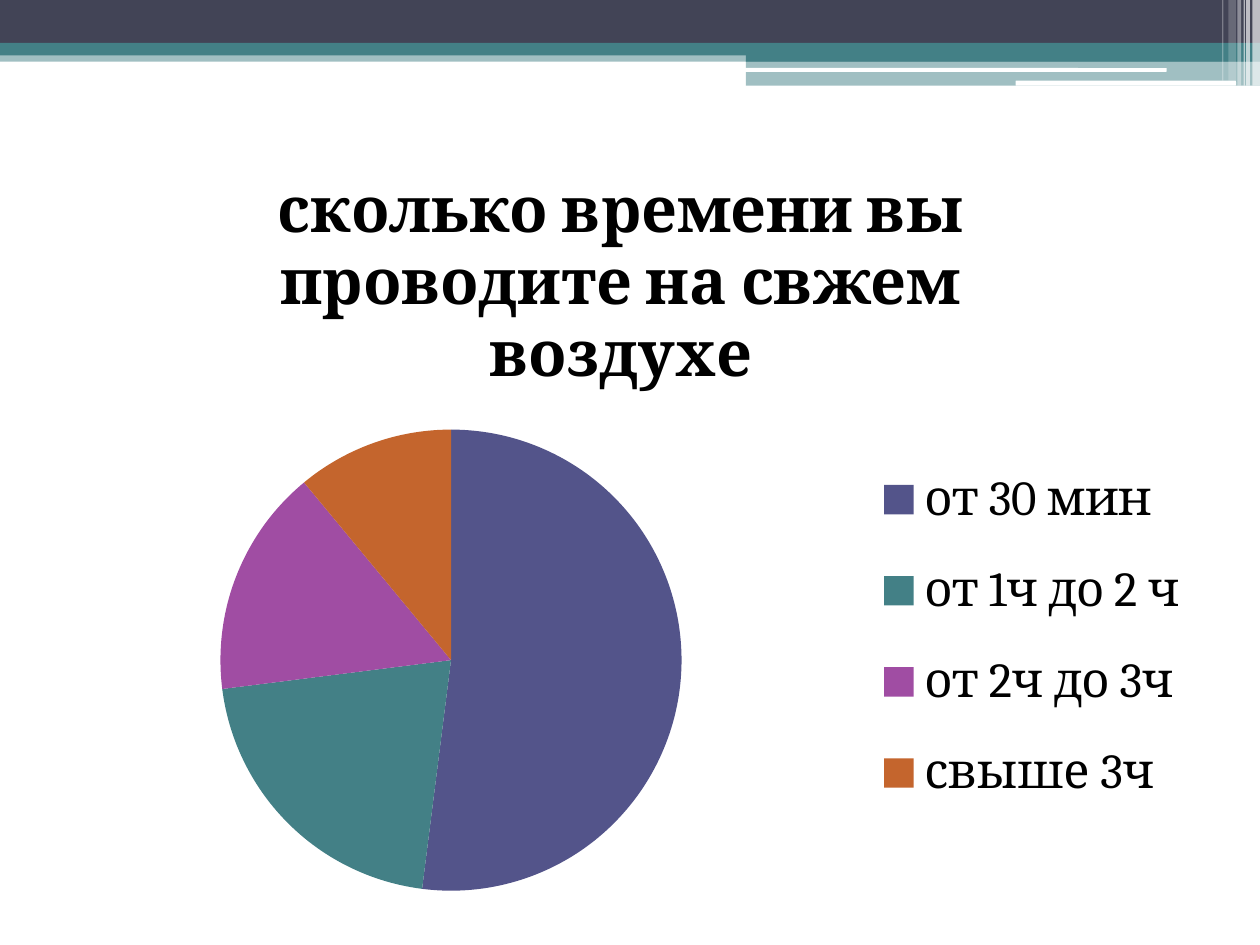
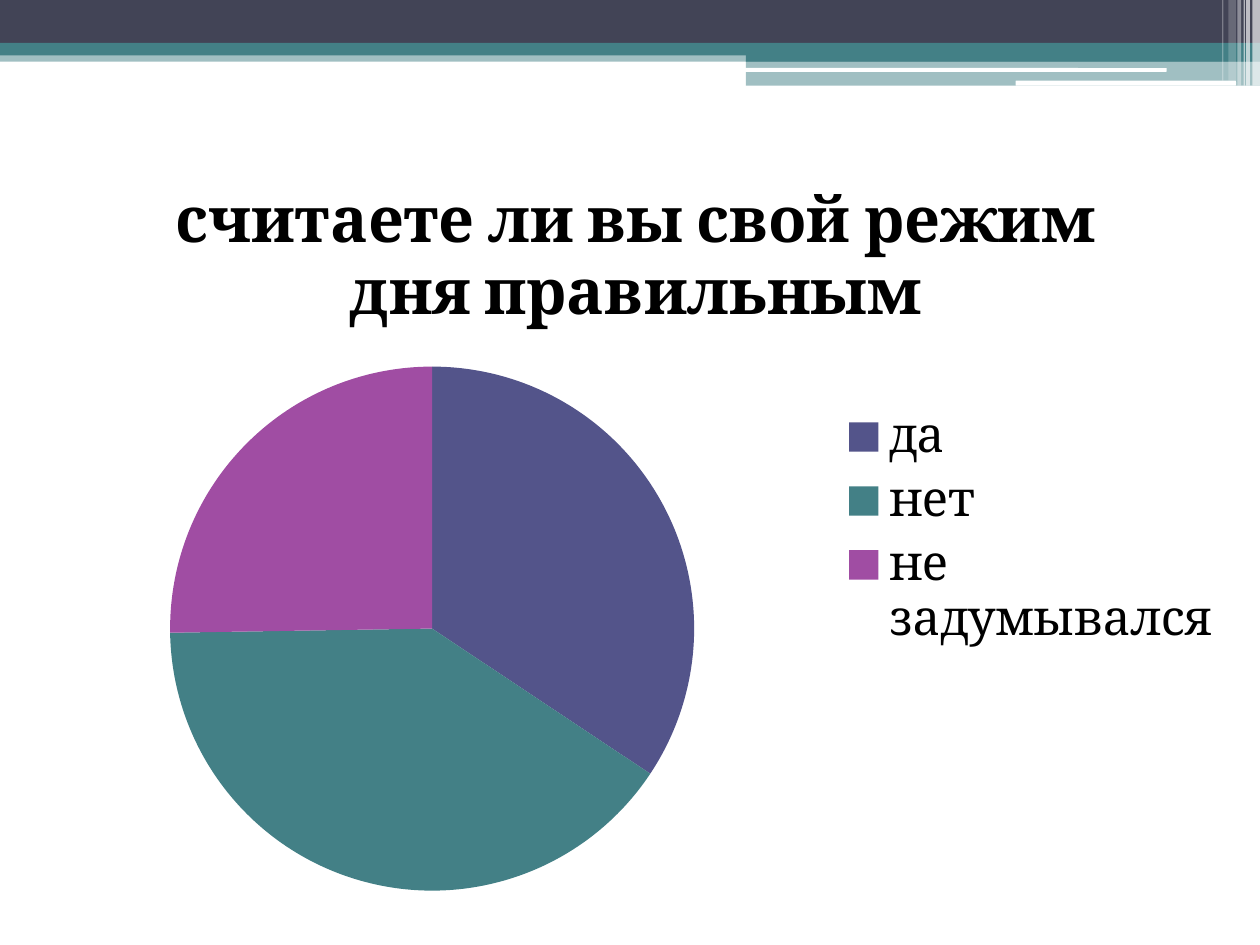
from typing import NamedTuple

from lxml.etree import SubElement
from pptx import Presentation
from pptx.chart.data import CategoryChartData
from pptx.dml.color import RGBColor
from pptx.enum.chart import XL_CHART_TYPE, XL_LEGEND_POSITION
from pptx.enum.shapes import MSO_SHAPE
from pptx.oxml import parse_xml
from pptx.oxml.ns import nsdecls, qn
from pptx.util import Emu, Pt

PX = 9144  # 100 px to the inch
FONT = "Cambria"
HUES = {
    "dark": "424456", "teal": "438086", "white": "FFFFFF", "black": "000000",
    "blue": "53548A", "plum": "A04DA3", "rust": "C4652D",
}
WEDGES = ("blue", "teal", "plum", "rust")


class Box(NamedTuple):
    x: int
    y: int
    w: int
    h: int


class Band(NamedTuple):
    box: Box
    hue: str
    alpha: int = 100
    round: bool = False


class Poll(NamedTuple):
    title: str
    votes: dict[str, int]
    box: Box
    pie: Box
    legend: Box


# Header bands, then the pale stripes at the right edge
BANDS = (
    Band(Box(0, 40, 1000, 9), "teal", 50),
    Band(Box(0, 0, 1000, 34), "dark"),
    Band(Box(0, 34, 1000, 10), "teal"),
    Band(Box(592, 39, 408, 10), "teal"),
    Band(Box(592, 48, 408, 20), "teal", 50),
    Band(Box(591, 54, 335, 3), "white", round=True),
    Band(Box(806, 64, 175, 4), "white", round=True),
    Band(Box(994, 0, 6, 68), "white", 65),
    Band(Box(989, 0, 3, 68), "white", 65),
    Band(Box(987, 0, 1, 68), "white", 60),
    Band(Box(982, 0, 3, 68), "white", 40),
    Band(Box(975, 0, 6, 64), "white", 20),
    Band(Box(970, 0, 1, 64), "white", 30),
)

POLLS = (
    Poll("сколько времени вы проводите на свжем воздухе",
         {"от 30 мин": 52, "от 1ч до 2 ч": 21, "от 2ч до 3ч": 16, "свыше 3ч": 11},
         Box(28, 107, 929, 614), Box(175, 341, 366, 366), Box(693, 346, 252, 318)),
    Poll("считаете ли вы свой режим дня правильным",
         {"да": 34, "нет": 40, "не задумывался": 25},
         Box(28, 115, 953, 606), Box(135, 291, 416, 416), Box(663, 318, 310, 203)),
)


def color(hue: str) -> RGBColor:
    return RGBColor.from_string(HUES[hue])


def place(box: Box) -> list[Emu]:
    return [Emu(n * PX) for n in box]


def style(font, size: int, bold: bool = False) -> None:
    font.name, font.size, font.bold = FONT, Pt(size), bold
    font.color.rgb = color("black")


def draw_band(slide, band: Band) -> None:
    kind = MSO_SHAPE.ROUNDED_RECTANGLE if band.round else MSO_SHAPE.RECTANGLE
    shape = slide.shapes.add_shape(kind, *place(band.box))
    shape.shadow.inherit = False
    shape.line.fill.background()
    shape.fill.solid()
    shape.fill.fore_color.rgb = color(band.hue)
    if band.alpha < 100:
        tint = shape.element.spPr.find(f".//{qn('a:srgbClr')}")
        SubElement(tint, qn("a:alpha"), val=str(band.alpha * 1000))


def set_layout(node, spot: int, box: Box, frame: Box, inner: bool = False) -> None:
    """Fix a chart part at a box given in slide px."""
    for old in node.findall(qn("c:layout")):
        node.remove(old)
    parts = {
        "x": (box.x - frame.x) / frame.w, "y": (box.y - frame.y) / frame.h,
        "w": box.w / frame.w, "h": box.h / frame.h,
    }
    target = '<c:layoutTarget val="inner"/>' if inner else ""
    modes = '<c:xMode val="edge"/><c:yMode val="edge"/>'
    sizes = "".join(f'<c:{k} val="{v:.4f}"/>' for k, v in parts.items())
    node.insert(spot, parse_xml(
        f"<c:layout {nsdecls('c')}><c:manualLayout>{target}{modes}{sizes}"
        "</c:manualLayout></c:layout>"))


def draw_poll(slide, poll: Poll) -> None:
    data = CategoryChartData(number_format="General")
    data.categories = poll.votes.keys()
    data.add_series(poll.title, poll.votes.values())
    chart = slide.shapes.add_chart(
        XL_CHART_TYPE.PIE, *place(poll.box), data).chart
    style(chart.font, 10)

    # Title
    chart.has_title = True
    frame = chart.chart_title.text_frame
    frame.text = poll.title
    style(frame.paragraphs[0].font, 36, bold=True)

    # Legend
    chart.has_legend = True
    legend = chart.legend
    legend.position = XL_LEGEND_POSITION.RIGHT
    legend.include_in_layout = False
    style(legend.font, 28)
    root = chart.element
    set_layout(root.find(f".//{qn('c:legend')}"), 1, poll.legend, poll.box)

    # Wedges
    plot = chart.plots[0]
    plot.vary_by_categories = True
    set_layout(root.find(f".//{qn('c:plotArea')}"), 0, poll.pie, poll.box, True)
    for i, hue in enumerate(WEDGES[:len(poll.votes)]):
        look = plot.series[0].points[i].format
        look.fill.solid()
        look.fill.fore_color.rgb = color(hue)
        look.line.fill.background()


def main() -> None:
    deck = Presentation()
    deck.slide_width, deck.slide_height = Emu(1000 * PX), Emu(750 * PX)
    for poll in POLLS:
        slide = deck.slides.add_slide(deck.slide_layouts[6])
        for band in BANDS:
            draw_band(slide, band)
        draw_poll(slide, poll)
    deck.save("out.pptx")


if __name__ == "__main__":
    main()
